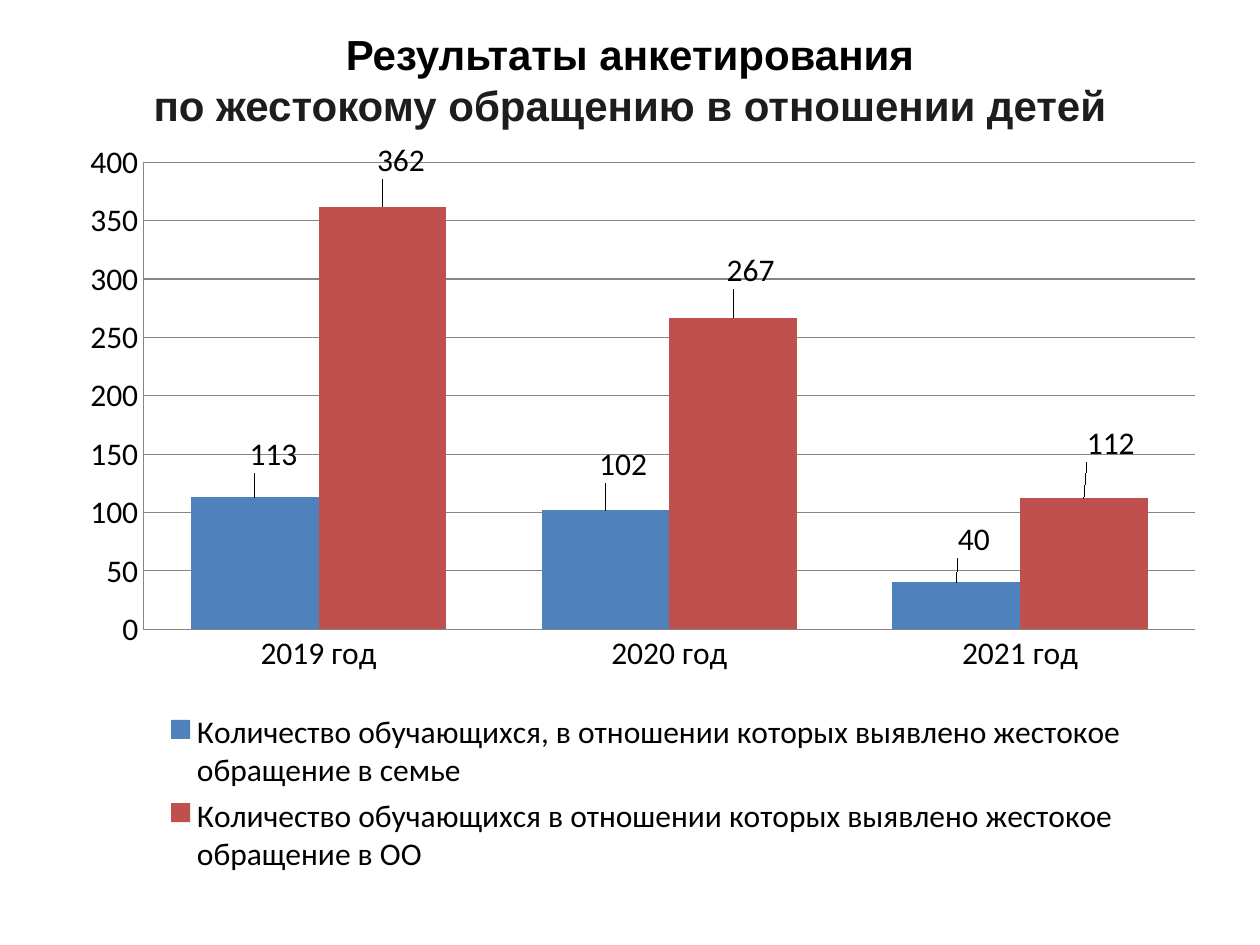
from lxml import etree
from pptx import Presentation
from pptx.chart.data import CategoryChartData
from pptx.dml.color import RGBColor
from pptx.enum.chart import XL_CHART_TYPE, XL_LABEL_POSITION, XL_LEGEND_POSITION, XL_TICK_MARK
from pptx.enum.text import MSO_ANCHOR, PP_ALIGN
from pptx.oxml.ns import qn
from pptx.util import Inches, Pt

COLUMNS = XL_CHART_TYPE.COLUMN_CLUSTERED
OUTSIDE_END = XL_LABEL_POSITION.OUTSIDE_END
LEGEND_BOTTOM = XL_LEGEND_POSITION.BOTTOM
NO_TICK = XL_TICK_MARK.NONE
MIDDLE = MSO_ANCHOR.MIDDLE
CENTER = PP_ALIGN.CENTER

THEME = {
    "title_font": "Arial",
    "chart_font": "Calibri",
    "title_size": Pt(24),
    "chart_size": Pt(18),
    "black": RGBColor(0x00, 0x00, 0x00),
    "title_dark": RGBColor(0x1D, 0x1D, 0x1B),
    "grid": RGBColor(0x86, 0x86, 0x86),
    "family": RGBColor(0x4F, 0x81, 0xBD),
    "school": RGBColor(0xC0, 0x50, 0x4D),
}

TITLE_LINES = [
    ("Результаты анкетирования", THEME["black"]),
    ("по жестокому обращению в отношении детей", THEME["title_dark"]),
]
YEARS = ["2019 год", "2020 год", "2021 год"]
# Name, values, colour, label shifts as fractions of the chart
SERIES = [
    ("Количество обучающихся, в отношении которых выявлено жестокое обращение в семье",
     [113, 102, 40], THEME["family"],
     [(0.016, -0.024), (0.015, -0.028), (0.015, -0.024)]),
    ("Количество обучающихся в отношении которых выявлено жестокое обращение в ОО",
     [362, 267, 112], THEME["school"],
     [(0.016, -0.028), (0.015, -0.03), (0.023, -0.039)]),
]


def set_layout(parent, index, **settings):
    """Give a chart part a manual layout, inserted as child number index."""
    for old_layout in parent.findall(qn("c:layout")):
        parent.remove(old_layout)
    layout = etree.Element(qn("c:layout"))
    manual = etree.SubElement(layout, qn("c:manualLayout"))
    for name, value in settings.items():
        etree.SubElement(manual, qn(f"c:{name}")).set("val", str(value))
    parent.insert(index, layout)


presentation = Presentation()
presentation.slide_width = Inches(10)
presentation.slide_height = Inches(7.5)
slide = presentation.slides.add_slide(presentation.slide_layouts[5])

# Title
title = slide.shapes.title
title.left, title.top = Inches(0), Inches(0.1)
title.width, title.height = Inches(10), Inches(1.45)
title_frame = title.text_frame
title_frame.vertical_anchor = MIDDLE
title_frame.margin_bottom = Inches(0.44)
paragraph = title_frame.paragraphs[0]
paragraph.alignment = CENTER
paragraph.font.name = THEME["title_font"]
paragraph.font.size = THEME["title_size"]
paragraph.font.bold = True
for number, (text, color) in enumerate(TITLE_LINES):
    if number:
        paragraph.add_line_break()
    run = paragraph.add_run()
    run.text = text
    run.font.color.rgb = color

# Chart
chart_data = CategoryChartData()
chart_data.categories = YEARS
for name, values, _, _ in SERIES:
    chart_data.add_series(name, values)
chart = slide.shapes.add_chart(
    COLUMNS, Inches(0.43), Inches(1.07), Inches(9.3), Inches(6.26), chart_data
).chart
chart.has_title = False
chart.font.name = THEME["chart_font"]
chart.font.size = THEME["chart_size"]
chart.font.color.rgb = THEME["black"]

plot = chart.plots[0]
plot.gap_width = 75
plot.overlap = 0
plot.vary_by_categories = False
plot_area = chart.element.find(".//" + qn("c:plotArea"))
set_layout(plot_area, 0, layoutTarget="inner", xMode="edge", yMode="edge",
           x=0.076, y=0.035, w=0.898, h=0.592)

# Axes
value_axis = chart.value_axis
value_axis.minimum_scale = 0
value_axis.maximum_scale = 400
value_axis.major_unit = 50
value_axis.has_major_gridlines = True
for axis in (chart.category_axis, value_axis):
    axis.major_tick_mark = NO_TICK
    axis.minor_tick_mark = NO_TICK
for line_format in (chart.category_axis.format, value_axis.format,
                    value_axis.major_gridlines.format):
    line_format.line.color.rgb = THEME["grid"]
    line_format.line.width = Pt(0.75)

# Columns and their labels
for series, (_, _, color, shifts) in zip(plot.series, SERIES):
    series.format.fill.solid()
    series.format.fill.fore_color.rgb = color
    series.data_labels.show_value = True
    for number in range(len(shifts)):
        series.points[number].data_label.position = OUTSIDE_END
    labels = series.data_labels._element.findall(qn("c:dLbl"))
    for label, (x, y) in zip(labels, shifts):
        set_layout(label, 1, x=x, y=y)

# Legend
chart.has_legend = True
legend = chart.legend
legend.position = LEGEND_BOTTOM
legend.include_in_layout = False
legend_element = chart.element.find(".//" + qn("c:legend"))
set_layout(legend_element, 1, xMode="edge", yMode="edge",
           x=0.09, y=0.725, w=0.83, h=0.22)

presentation.save("out.pptx")
